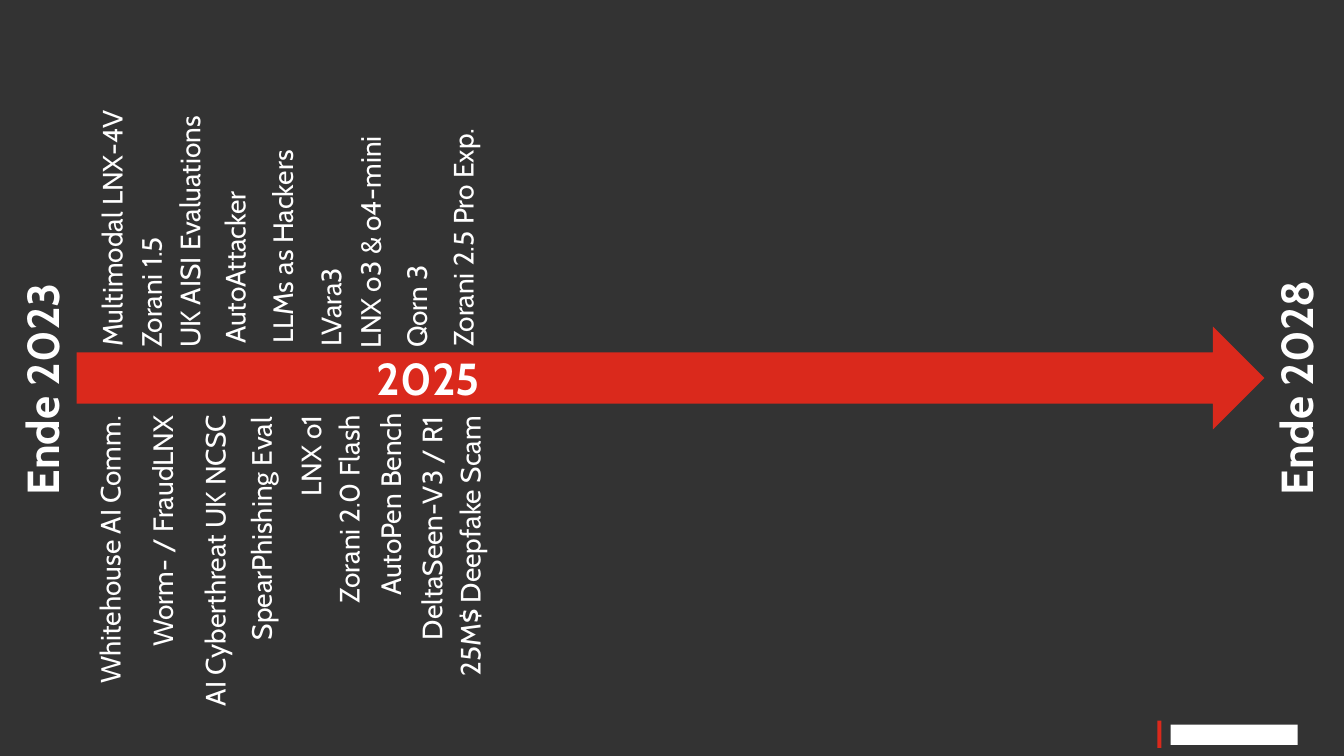
"""Build a dark timeline slide of AI milestones from the end of 2023 to the end of 2028."""
from dataclasses import dataclass

from pptx import Presentation
from pptx.dml.color import RGBColor
from pptx.enum.shapes import MSO_SHAPE
from pptx.enum.text import MSO_AUTO_SIZE, PP_ALIGN
from pptx.util import Inches, Pt

ARROW, RECT = MSO_SHAPE.RIGHT_ARROW, MSO_SHAPE.RECTANGLE
LEFT, CENTER, RIGHT = PP_ALIGN.LEFT, PP_ALIGN.CENTER, PP_ALIGN.RIGHT
FIT_SHAPE = MSO_AUTO_SIZE.SHAPE_TO_FIT_TEXT

COLORS = {"background": "333333", "red": "DA291C", "white": "FFFFFF"}
FONT = "Cabin"
ABOVE_LENGTH, BELOW_LENGTH, LABEL_HEIGHT = 3.54, 3.35, 0.44
YEAR_Y, YEAR_HEIGHT = 3.75, 0.64


@dataclass(frozen=True)
class Milestone:
    text: str
    x: float
    edge: float


@dataclass(frozen=True)
class Year:
    text: str
    x: float
    width: float
    rotation: int = 270
    align: PP_ALIGN = LEFT


@dataclass(frozen=True)
class Block:
    kind: MSO_SHAPE
    left: float
    top: float
    width: float
    height: float
    color: str


ABOVE = [
    Milestone("Multimodal LNX-4V", 1.11, 3.54),
    Milestone("Zorani 1.5", 1.5, 3.55),
    Milestone("UK AISI Evaluations", 1.88, 3.55),
    Milestone("AutoAttacker", 2.33, 3.51),
    Milestone("LLMs as Hackers", 2.8, 3.51),
    Milestone("LVara3", 3.28, 3.54),
    Milestone("LNX o3 & o4-mini", 3.67, 3.56),
    Milestone("Qorn 3", 4.13, 3.55),
    Milestone("Zorani 2.5 Pro Exp.", 4.59, 3.54),
]
BELOW = [
    Milestone("Whitehouse AI Comm.", 1.09, 4.03),
    Milestone("Worm- / FraudLNX", 1.61, 4.03),
    Milestone("AI Cyberthreat UK NCSC", 2.13, 4.02),
    Milestone("SpearPhishing Eval", 2.59, 4.04),
    Milestone("LNX o1", 3.08, 4.02),
    Milestone("Zorani 2.0 Flash", 3.46, 4.02),
    Milestone("AutoPen Bench", 3.87, 4),
    Milestone("DeltaSeen-V3 / R1", 4.28, 4.03),
    Milestone("25M$ Deepfake Scam", 4.66, 4.03),
]
YEARS = [
    Year("Ende 2023", 0.42, 2.52),
    Year("Ende 2028", 12.85, 2.52),
    Year("2025", 4.25, 1.4, rotation=0, align=CENTER),
]
BLOCKS = [
    Block(ARROW, 0.76, 3.24, 11.78, 1.02, "red"),
    Block(RECT, 11.48, 7.15, 0.04, 0.27, "red"),
    Block(RECT, 11.61, 7.19, 1.26, 0.2, "white"),
]


def add_block(slide, block: Block) -> None:
    s = slide.shapes.add_shape(block.kind, Inches(block.left), Inches(block.top),
                               Inches(block.width), Inches(block.height))
    s.shadow.inherit = False
    s.fill.solid()
    s.fill.fore_color.rgb = RGBColor.from_string(COLORS[block.color])
    s.line.fill.background()


def add_text(slide, text: str, *, x: float, y: float, width: float, height: float,
             size: int = 20, bold: bool = False, align: PP_ALIGN = LEFT,
             rotation: int = 270) -> None:
    s = slide.shapes.add_textbox(Inches(x - width / 2), Inches(y - height / 2),
                                 Inches(width), Inches(height))
    s.rotation = rotation
    tf = s.text_frame
    tf.word_wrap = True
    tf.auto_size = FIT_SHAPE
    p = tf.paragraphs[0]
    p.alignment = align
    r = p.add_run()
    r.text = text
    r.font.name = FONT
    r.font.size = Pt(size)
    r.font.bold = bold
    r.font.color.rgb = RGBColor.from_string(COLORS["white"])


def main() -> None:
    prs = Presentation()
    prs.slide_width, prs.slide_height = Inches(13.33), Inches(7.5)
    slide = prs.slides.add_slide(prs.slide_layouts[6])
    slide.background.fill.solid()
    slide.background.fill.fore_color.rgb = RGBColor.from_string(COLORS["background"])

    for block in BLOCKS:
        add_block(slide, block)
    for year in YEARS:
        add_text(slide, year.text, x=year.x, y=YEAR_Y, width=year.width, height=YEAR_HEIGHT,
                 size=32, bold=True, align=year.align, rotation=year.rotation)
    for m in ABOVE:
        add_text(slide, m.text, x=m.x, y=m.edge - ABOVE_LENGTH / 2,
                 width=ABOVE_LENGTH, height=LABEL_HEIGHT)
    for m in BELOW:
        add_text(slide, m.text, x=m.x, y=m.edge + BELOW_LENGTH / 2,
                 width=BELOW_LENGTH, height=LABEL_HEIGHT, align=RIGHT)

    prs.save("out.pptx")


if __name__ == "__main__":
    main()
